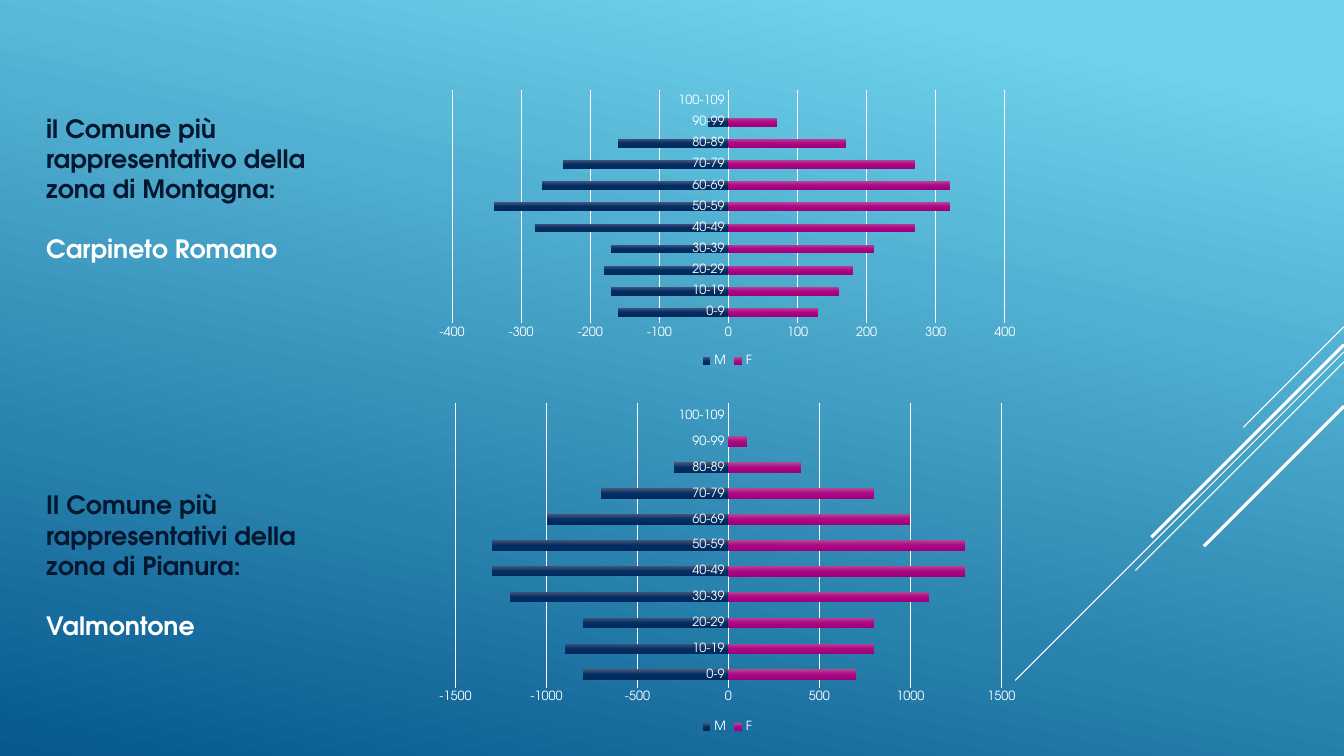
"""Build a slide comparing the population pyramids of two towns."""
import copy
import lxml.etree
import pptx
import pptx.chart.data
import pptx.dml.color
import pptx.enum.chart
import pptx.enum.shapes
import pptx.enum.text
import pptx.oxml.ns
import pptx.util

AGES = ["0-9", "10-19", "20-29", "30-39", "40-49", "50-59",
        "60-69", "70-79", "80-89", "90-99", "100-109"]
TOWNS = [
    {"intro": "il Comune più rappresentativo della zona di Montagna:",
     "name": "Carpineto Romano",
     "text_cells": (3.6, 10.7, 32, 16.2), "chart_cells": (42.4, 8.4, 59.5, 28.4),
     "limit": 400, "step": 100,
     "M": [-160, -170, -180, -170, -280, -340, -270, -240, -160, -30, 0],
     "F": [130, 160, 180, 210, 270, 320, 320, 270, 170, 70, 0]},
    {"intro": "Il Comune più rappresentativi della zona di Pianura:",
     "name": "Valmontone",
     "text_cells": (3.6, 48.1, 30.3, 16.2), "chart_cells": (42.4, 39.3, 59.5, 33.8),
     "limit": 1500, "step": 500,
     "M": [-800, -900, -800, -1200, -1300, -1300, -1000, -700, -300, 0, 0],
     "F": [700, 800, 800, 1100, 1300, 1300, 1000, 800, 400, 100, 0]},
]
DIAGONALS = [(32.4, 10, "thin"), (34.9, 32.6, "thin"), (35.9, 20.7, "thin"),
             (34.2, 19.1, "thick"), (40.3, 13.9, "thick")]
THEME = {
    "font": "TeX Gyre Adventor", "light": "FFFFFF", "dark": "031730",
    "title": 18, "chart": 10, "label": 9, "gap": 21.6,
    "thin": 0.75, "thick": 2.25, "axis": 1,
    "background": [(0.1, "6ED2EB"), (1, "06588E")], "background_angle": 258,
    "M": [(0, "4B5576"), (0.5, "002F66"), (1, "00295B")],
    "F": [(0, "B14B91"), (0.5, "AD0686"), (1, "9F007A")], "bar_angle": 270,
}
COLUMNS, ROWS = 133.3, 75
WIDTH, HEIGHT = pptx.util.Inches(13.33), pptx.util.Inches(7.5)


def place(column, row):
    return round(column * WIDTH / COLUMNS), round(row * HEIGHT / ROWS)


def frame(cells):
    return place(*cells[:2]) + place(*cells[2:])


def rgb(code):
    return pptx.dml.color.RGBColor.from_string(code)


def assign(target, values):
    for name, value in values.items():
        setattr(target, name, value)


def style_font(font, size, color="light", bold=False):
    assign(font, {"name": THEME["font"], "size": pptx.util.Pt(THEME[size]), "bold": bold})
    font.color.rgb = rgb(THEME[color])


def style_line(line, weight):
    line.color.rgb = rgb(THEME["light"])
    line.width = pptx.util.Pt(THEME[weight])


def paint_gradient(fill, element, stops, angle):
    fill.gradient()
    fill.gradient_angle = angle
    stop_list = element.find(".//" + pptx.oxml.ns.qn("a:gsLst"))
    while len(stop_list) < len(stops):
        stop_list.append(copy.deepcopy(stop_list[-1]))
    for stop, (position, color) in zip(fill.gradient_stops, stops):
        stop.position = position
        stop.color.rgb = rgb(color)


def add_diagonal(slide, row, run, weight):
    connector = slide.shapes.add_connector(
        pptx.enum.shapes.MSO_CONNECTOR.STRAIGHT,
        *place(COLUMNS, row), *place(COLUMNS - run, row + run))
    style_line(connector.line, weight)
    lxml.etree.SubElement(connector._element.spPr, pptx.oxml.ns.qn("a:effectLst"))


def add_pyramid(slide, town):
    data = pptx.chart.data.CategoryChartData()
    data.categories = AGES
    for sex in "MF":
        data.add_series(sex, town[sex])
    chart = slide.shapes.add_chart(
        pptx.enum.chart.XL_CHART_TYPE.BAR_STACKED, *frame(town["chart_cells"]), data).chart
    style_font(chart.font, "chart")
    assign(chart, {"has_title": False, "has_legend": True})
    assign(chart.legend, {"position": pptx.enum.chart.XL_LEGEND_POSITION.BOTTOM,
                          "include_in_layout": False})
    style_font(chart.legend.font, "label")
    plot = chart.plots[0]
    assign(plot, {"gap_width": 150, "overlap": 100, "vary_by_categories": False})
    for series in plot.series:
        series.invert_if_negative = False
        paint_gradient(series.format.fill, series._element,
                       THEME[series.name], THEME["bar_angle"])
    for axis in (chart.category_axis, chart.value_axis):
        assign(axis, {"major_tick_mark": pptx.enum.chart.XL_TICK_MARK.NONE,
                      "minor_tick_mark": pptx.enum.chart.XL_TICK_MARK.NONE})
        style_font(axis.tick_labels.font, "label")
    chart.category_axis.has_major_gridlines = False
    style_line(chart.category_axis.format.line, "axis")
    assign(chart.value_axis, {"minimum_scale": -town["limit"], "maximum_scale": town["limit"],
                              "major_unit": town["step"], "has_major_gridlines": True})
    chart.value_axis.format.line.fill.background()
    style_line(chart.value_axis.major_gridlines.format.line, "thin")


def add_caption(slide, town):
    text_frame = slide.shapes.add_textbox(*frame(town["text_cells"])).text_frame
    assign(text_frame, {"word_wrap": True,
                        "auto_size": pptx.enum.text.MSO_AUTO_SIZE.SHAPE_TO_FIT_TEXT})
    intro, name = text_frame.paragraphs[0], text_frame.add_paragraph()
    name.space_before = pptx.util.Pt(THEME["gap"])
    for paragraph, key, color in ((intro, "intro", "dark"), (name, "name", "light")):
        run = paragraph.add_run()
        run.text = town[key]
        style_font(run.font, "title", color, bold=True)


def main():
    presentation = pptx.Presentation()
    assign(presentation, {"slide_width": WIDTH, "slide_height": HEIGHT})
    slide = presentation.slides.add_slide(presentation.slide_layouts[6])
    paint_gradient(slide.background.fill, slide._element,
                   THEME["background"], THEME["background_angle"])
    for diagonal in DIAGONALS:
        add_diagonal(slide, *diagonal)
    for town in TOWNS:
        add_pyramid(slide, town)
    for town in TOWNS:
        add_caption(slide, town)
    presentation.save("out.pptx")


if __name__ == "__main__":
    main()
